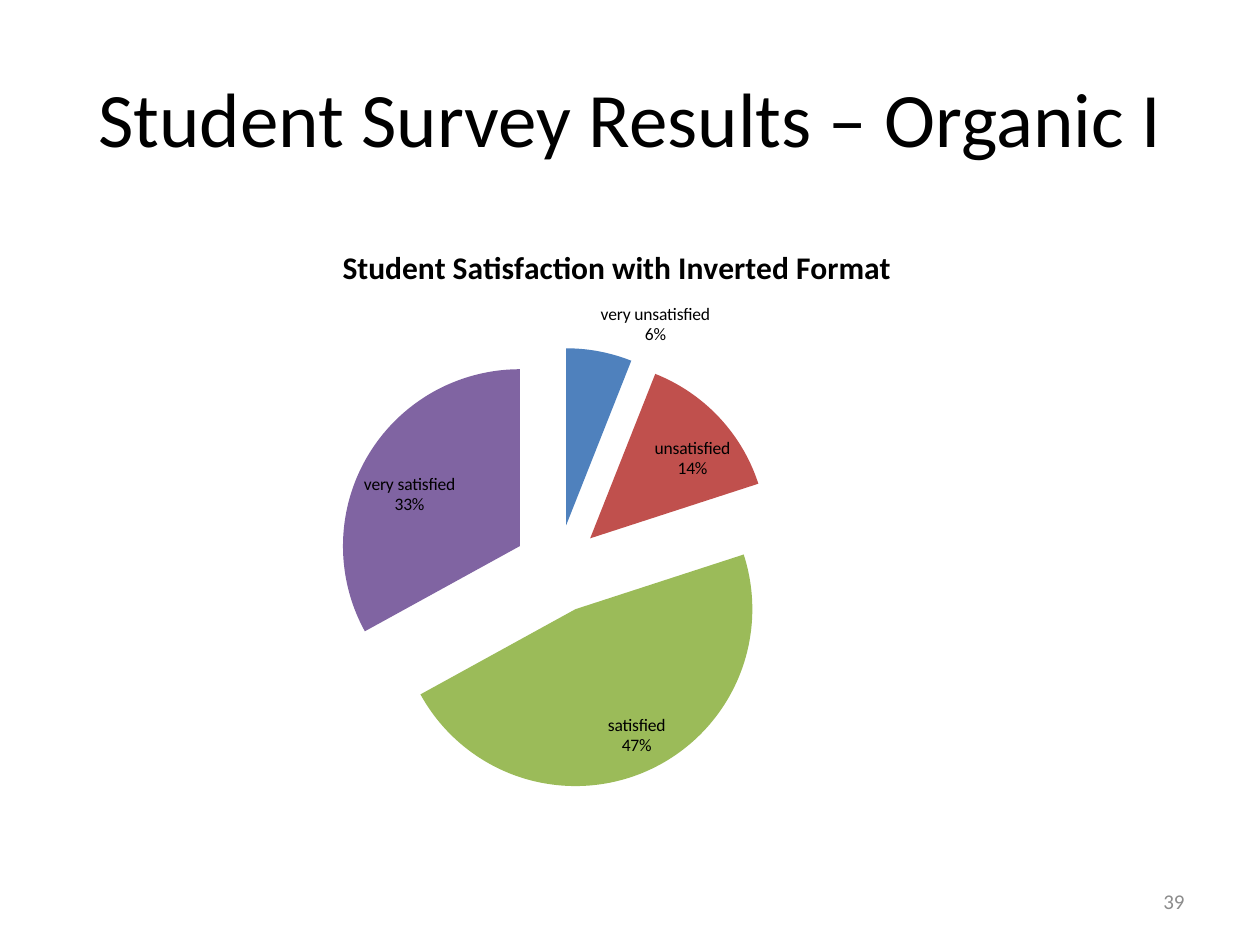
"""Build the survey results slide with an exploded pie chart."""
from lxml import etree
from pptx import Presentation
from pptx import util as u
from pptx.chart.data import CategoryChartData
from pptx.dml.color import RGBColor
from pptx.enum import chart as ch, text
from pptx.oxml.ns import qn

COLORS = {"ink": "000000", "number": "8C8C8C", "very unsatisfied": "4F81BD",
          "unsatisfied": "C0504D", "satisfied": "9BBB59", "very satisfied": "8064A2"}
SHARES = {"very unsatisfied": 6, "unsatisfied": 14, "satisfied": 47, "very satisfied": 33}
FONT = "Calibri"


def px(length):
    return u.Emu(round(length * 914400 / 126))


def style_font(font, size, color="ink", bold=False):
    font.name, font.size, font.bold = FONT, u.Pt(size), bold
    font.color.rgb = RGBColor.from_string(COLORS[color])


def write(frame, words, size, color="ink", bold=False, align=text.PP_ALIGN.CENTER):
    frame.text = words
    paragraph = frame.paragraphs[0]
    paragraph.alignment = align
    style_font(paragraph.runs[0].font, size, color, bold)


def place(parent, index, **fractions):
    old = parent.find(qn("c:layout"))
    if old is not None:
        parent.remove(old)
    layout = etree.Element(qn("c:layout"))
    manual = etree.SubElement(layout, qn("c:manualLayout"))
    if "w" in fractions:
        etree.SubElement(manual, qn("c:layoutTarget")).set("val", "inner")
    for mode in ("xMode", "yMode"):
        etree.SubElement(manual, qn(f"c:{mode}")).set("val", "edge")
    for key, value in fractions.items():
        etree.SubElement(manual, qn(f"c:{key}")).set("val", str(value))
    parent.insert(index, layout)


class SurveySlide:
    def __init__(self, deck):
        self.slide = deck.slides.add_slide(deck.slide_layouts[5])

    def title(self, words, left, top, width, height):
        heading = self.slide.shapes.title
        heading.left, heading.top = px(left), px(top)
        heading.width, heading.height = px(width), px(height)
        heading.text_frame.vertical_anchor = text.MSO_ANCHOR.MIDDLE
        write(heading.text_frame, words, 44)

    def page_number(self, words, left, top, width, height):
        box = self.slide.shapes.add_textbox(px(left), px(top), px(width), px(height))
        box.text_frame.word_wrap = True
        box.text_frame.vertical_anchor = text.MSO_ANCHOR.MIDDLE
        write(box.text_frame, words, 12, "number", align=text.PP_ALIGN.RIGHT)

    def pie(self, caption, shares, left, top, width, height):
        data = CategoryChartData()
        data.categories = list(shares)
        data.add_series("Series 1", list(shares.values()))
        chart = self.slide.shapes.add_chart(
            ch.XL_CHART_TYPE.PIE, px(left), px(top), px(width), px(height), data).chart
        style_font(chart.font, 10)
        chart.has_legend = False
        chart.has_title = True
        write(chart.chart_title.text_frame, caption, 18, bold=True)
        place(chart.chart_title._element, 1, x=0.26, y=0.05)
        plot = chart.plots[0]
        plot.vary_by_categories = True
        place(plot._element.getparent(), 0, x=0.26, y=0.23, w=0.39, h=0.74)
        self.slices(plot.series[0], shares)
        self.labels(plot)

    def slices(self, series, shares):
        explosion = etree.Element(qn("c:explosion"))
        explosion.set("val", "25")
        series._element.find(qn("c:tx")).addnext(explosion)
        for index, answer in enumerate(shares):
            fill = series.points[index].format.fill
            fill.solid()
            fill.fore_color.rgb = RGBColor.from_string(COLORS[answer])

    def labels(self, plot):
        plot.has_data_labels = True
        labels = plot.data_labels
        style_font(labels.font, 10)
        labels.show_value = False
        labels.show_category_name = labels.show_percentage = True
        labels.position = ch.XL_LABEL_POSITION.BEST_FIT
        separator = etree.Element(qn("c:separator"))
        separator.text = "\n"
        labels._element.find(qn("c:showPercent")).addnext(separator)
        bubble = labels._element.find(qn("c:showBubbleSize"))
        if bubble is not None:
            bubble.addnext(separator)


def main():
    deck = Presentation()
    deck.slide_width, deck.slide_height = px(1260), px(945)
    survey = SurveySlide(deck)
    survey.title("Student Survey Results – Organic I", 63, 38, 1134, 158)
    survey.pie("Student Satisfaction with Inverted Format", SHARES, 42, 210, 1134, 598)
    survey.page_number("39", 903, 876, 294, 50)
    deck.save("out.pptx")


if __name__ == "__main__":
    main()
